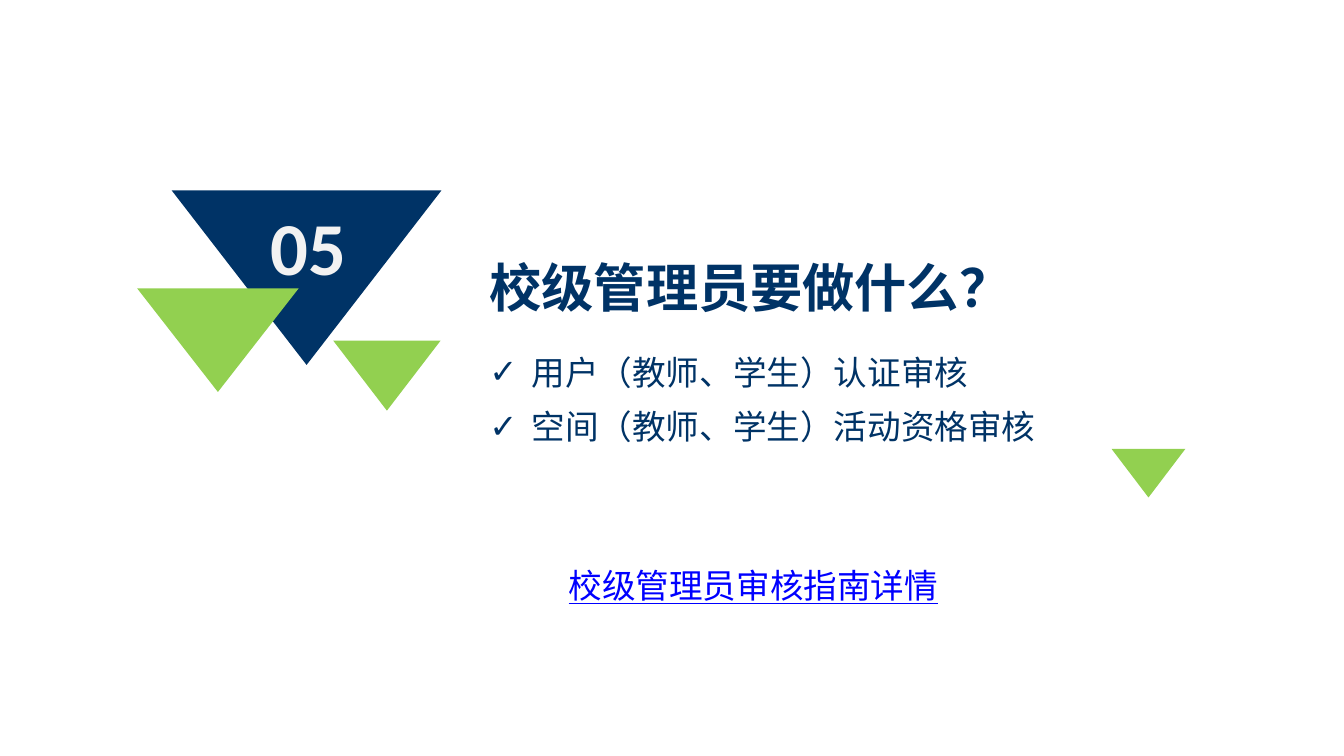
from pptx import Presentation
from pptx import util as u
from pptx.dml import color
from pptx.enum import shapes, text
from pptx.oxml import ns
from lxml import etree

COLOURS = {"navy": "003366", "green": "92D050", "pale": "F2F2F2", "link": "0000FF"}
CJK_FONT = "Noto Sans CJK SC"
HEADING = {"name": CJK_FONT, "size": u.Pt(28), "bold": True}
ITEM = {"name": CJK_FONT, "size": u.Pt(18), "bold": False}
NUMBER = {"name": "Calibri", "size": u.Pt(40), "bold": True}
LINK = {"name": "Calibri", "size": u.Pt(18), "underline": True}


def place(holder, left, top, width, height):
    values = {"left": left, "top": top, "width": width, "height": height}
    for name, value in values.items():
        setattr(holder, name, u.Pt(value))


def prepare_frame(holder):
    frame = holder.text_frame
    values = {"word_wrap": True, "auto_size": text.MSO_AUTO_SIZE.NONE,
              "vertical_anchor": text.MSO_ANCHOR.TOP}
    for name, value in values.items():
        setattr(frame, name, value)
    return frame


def write(para, words, font_values, colour, align=text.PP_ALIGN.LEFT):
    para.alignment = align
    span = para.add_run()
    span.text = words
    for name, value in font_values.items():
        setattr(span.font, name, value)
    span.font.color.rgb = color.RGBColor.from_string(COLOURS[colour])
    properties = span.font._element
    etree.SubElement(properties, ns.qn("a:ea"), typeface=CJK_FONT)


def add_tick(para):
    properties = para._p.get_or_add_pPr()
    properties.set("marL", str(u.Pt(22.5)))
    properties.set("indent", str(u.Pt(-22.5)))
    etree.SubElement(properties, ns.qn("a:buChar"), char="✓")


def add_label(page, box, words, font_values, colour, align=text.PP_ALIGN.LEFT):
    label = page.shapes.add_textbox(0, 0, 0, 0)
    place(label, *box)
    write(prepare_frame(label).paragraphs[0], words, font_values, colour, align)


def add_triangle(page, left, top, width, height, colour):
    triangle = page.shapes.add_shape(shapes.MSO_SHAPE.ISOSCELES_TRIANGLE, 0, 0, 0, 0)
    place(triangle, left, top, width, height)
    triangle.rotation = 180
    triangle.shadow.inherit = False
    triangle.fill.solid()
    triangle.fill.fore_color.rgb = color.RGBColor.from_string(COLOURS[colour])
    triangle.line.fill.background()


def add_emblem(page, left, top, number):
    for across, down, width, height, colour in (
        (18.5, 0, 144.5, 93.5, "navy"),
        (0, 52.5, 86.5, 55.5, "green"),
        (105, 80.5, 57.5, 37.5, "green"),
    ):
        add_triangle(page, left + across, top + down, width, height, colour)
    add_label(page, (left + 49, top + 2, 85, 55.5), number, NUMBER, "pale",
              text.PP_ALIGN.CENTER)


def fill_content(page, left, top, width, heading, items):
    title, body = page.placeholders
    place(title, left, top, width, 41)
    write(prepare_frame(title).paragraphs[0], heading, HEADING, "navy")

    place(body, left, top + 52, width, 68)
    frame = prepare_frame(body)
    for index, words in enumerate(items):
        para = frame.add_paragraph() if index else frame.paragraphs[0]
        para.space_before = u.Pt(0)
        para.space_after = u.Pt(7.5)
        write(para, words, ITEM, "navy")
        add_tick(para)


def main():
    deck = Presentation()
    deck.slide_width, deck.slide_height = u.Pt(720), u.Pt(405)
    page = deck.slides.add_slide(deck.slide_layouts[1])
    fill_content(page, 255, 133, 450, "校级管理员要做什么？",
                 ("用户（教师、学生）认证审核", "空间（教师、学生）活动资格审核"))
    add_emblem(page, 73.5, 102, "05")
    add_triangle(page, 595.5, 240.5, 39.5, 26, "green")
    add_label(page, (297.5, 299, 317.5, 29), "校级管理员审核指南详情", LINK, "link")
    deck.save("out.pptx")


if __name__ == "__main__":
    main()
